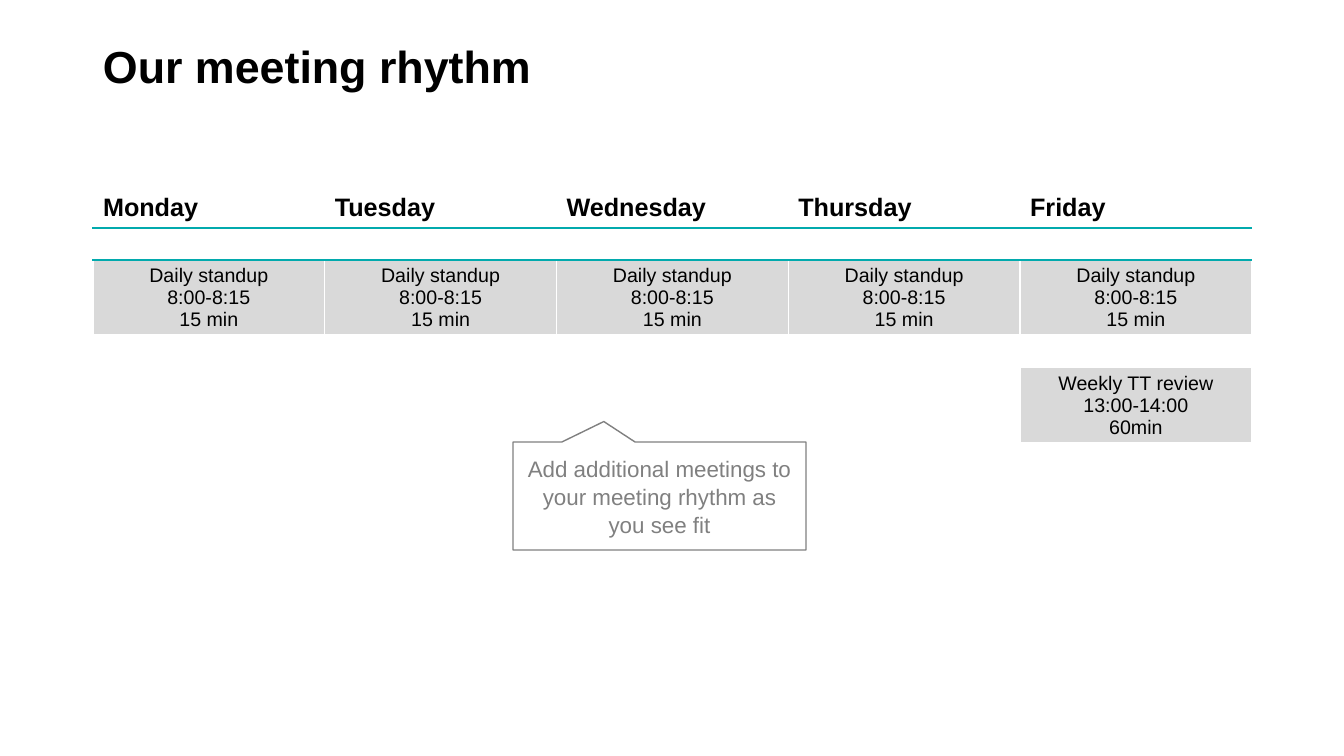
from dataclasses import dataclass

from lxml.etree import SubElement
from pptx import Presentation
from pptx.dml.color import RGBColor
from pptx.enum.shapes import MSO_SHAPE
from pptx.enum.text import MSO_ANCHOR, PP_ALIGN
from pptx.oxml.ns import qn
from pptx.slide import Slide
from pptx.table import Table, _Cell
from pptx.text.text import TextFrame
from pptx.util import Emu, Pt


@dataclass(frozen=True)
class Theme:
    font: str = "Arial"
    text: str = "000000"
    accent: str = "01AAAD"
    meeting: str = "D9D9D9"
    note: str = "808080"
    white: str = "FFFFFF"
    title_size: int = 32
    day_size: int = 18
    note_size: int = 16
    meeting_size: int = 14
    thin_line: float = 1
    accent_line: float = 2.25


@dataclass(frozen=True)
class Box:
    left: int
    top: int
    width: int
    height: int

    def emu(self) -> tuple[Emu, Emu, Emu, Emu]:
        return px(self.left), px(self.top), px(self.width), px(self.height)


@dataclass(frozen=True)
class Meeting:
    row: int
    days: tuple[int, ...]
    text: str


THEME = Theme()
PX_PER_INCH = 100.8
SLIDE_WIDTH, SLIDE_HEIGHT = 1344, 756
TITLE_BOX = Box(93, 40, 1159, 100)
CALENDAR_BOX = Box(93, 188, 1159, 427)
NOTE_BOX = Box(513, 442, 293, 108)
ROW_HEIGHTS = (40, 32, 75, 33, 75, 43, 43, 43, 43)
DAYS = ("Monday", "Tuesday", "Wednesday", "Thursday", "Friday")
MEETINGS = (
    Meeting(2, (0, 1, 2, 3, 4), "Daily standup\n8:00-8:15\n15 min"),
    Meeting(4, (4,), "Weekly TT review\n13:00-14:00\n60min"),
)


def px(length: int) -> Emu:
    return Emu(round(length * 914400 / PX_PER_INCH))


def rgb(color: str) -> RGBColor:
    return RGBColor.from_string(color)


def write(frame: TextFrame, text: str, size: int, color: str,
          bold: bool = False, align: PP_ALIGN = PP_ALIGN.LEFT,
          spacing: float = 1.0) -> None:
    frame.text = text
    frame.word_wrap = True
    for paragraph in frame.paragraphs:
        paragraph.alignment = align
        paragraph.line_spacing = spacing
        for run in paragraph.runs:
            run.font.name = THEME.font
            run.font.size = Pt(size)
            run.font.bold = bold
            run.font.color.rgb = rgb(color)


def set_border(cell: _Cell, side: str, color: str, width: float) -> None:
    line = SubElement(cell._tc.get_or_add_tcPr(), qn(f"a:ln{side}"), w=str(Pt(width)))
    SubElement(SubElement(line, qn("a:solidFill")), qn("a:srgbClr"), val=color)


def style_cell(cell: _Cell, row: int) -> None:
    accent_side = {0: "B", 1: "T"}.get(row)
    # The rule below the empty second row belongs to both rows it separates
    second_rule = {1: "B", 2: "T"}.get(row)
    for side in "LRTB":
        if side in (accent_side, second_rule):
            set_border(cell, side, THEME.accent, THEME.accent_line)
        else:
            set_border(cell, side, THEME.white, THEME.thin_line)
    cell.fill.background()
    cell.margin_top = cell.margin_bottom = px(0)


def add_title(slide: Slide) -> None:
    title = slide.shapes.add_textbox(*TITLE_BOX.emu())
    write(title.text_frame, "Our meeting rhythm", THEME.title_size, THEME.text,
          bold=True, spacing=0.9)


def add_meeting(table: Table, meeting: Meeting) -> None:
    for day in meeting.days:
        cell = table.cell(meeting.row, day)
        cell.fill.solid()
        cell.fill.fore_color.rgb = rgb(THEME.meeting)
        cell.vertical_anchor = MSO_ANCHOR.MIDDLE
        write(cell.text_frame, meeting.text, THEME.meeting_size, THEME.text,
              align=PP_ALIGN.CENTER)


def add_calendar(slide: Slide) -> None:
    table = slide.shapes.add_table(len(ROW_HEIGHTS), len(DAYS), *CALENDAR_BOX.emu()).table
    table.first_row = table.horz_banding = False
    for row, height in enumerate(ROW_HEIGHTS):
        table.rows[row].height = px(height)
        for cell in table.rows[row].cells:
            style_cell(cell, row)
    for column, day in enumerate(DAYS):
        cell = table.cell(0, column)
        cell.vertical_anchor = MSO_ANCHOR.MIDDLE
        write(cell.text_frame, day, THEME.day_size, THEME.text, bold=True)
    for meeting in MEETINGS:
        add_meeting(table, meeting)


def add_note(slide: Slide) -> None:
    note = slide.shapes.add_shape(MSO_SHAPE.RECTANGULAR_CALLOUT, *NOTE_BOX.emu())
    note.adjustments[0], note.adjustments[1] = -0.19, -0.69
    note.shadow.inherit = False
    note.fill.solid()
    note.fill.fore_color.rgb = rgb(THEME.white)
    note.line.color.rgb = rgb(THEME.note)
    note.line.width = Pt(THEME.thin_line)
    note.text_frame.vertical_anchor = MSO_ANCHOR.MIDDLE
    write(note.text_frame, "Add additional meetings to your meeting rhythm as you see fit",
          THEME.note_size, THEME.note, align=PP_ALIGN.CENTER, spacing=1.05)


def main() -> None:
    presentation = Presentation()
    presentation.slide_width = px(SLIDE_WIDTH)
    presentation.slide_height = px(SLIDE_HEIGHT)
    slide = presentation.slides.add_slide(presentation.slide_layouts[6])
    add_title(slide)
    add_calendar(slide)
    add_note(slide)
    presentation.save("out.pptx")


if __name__ == "__main__":
    main()
